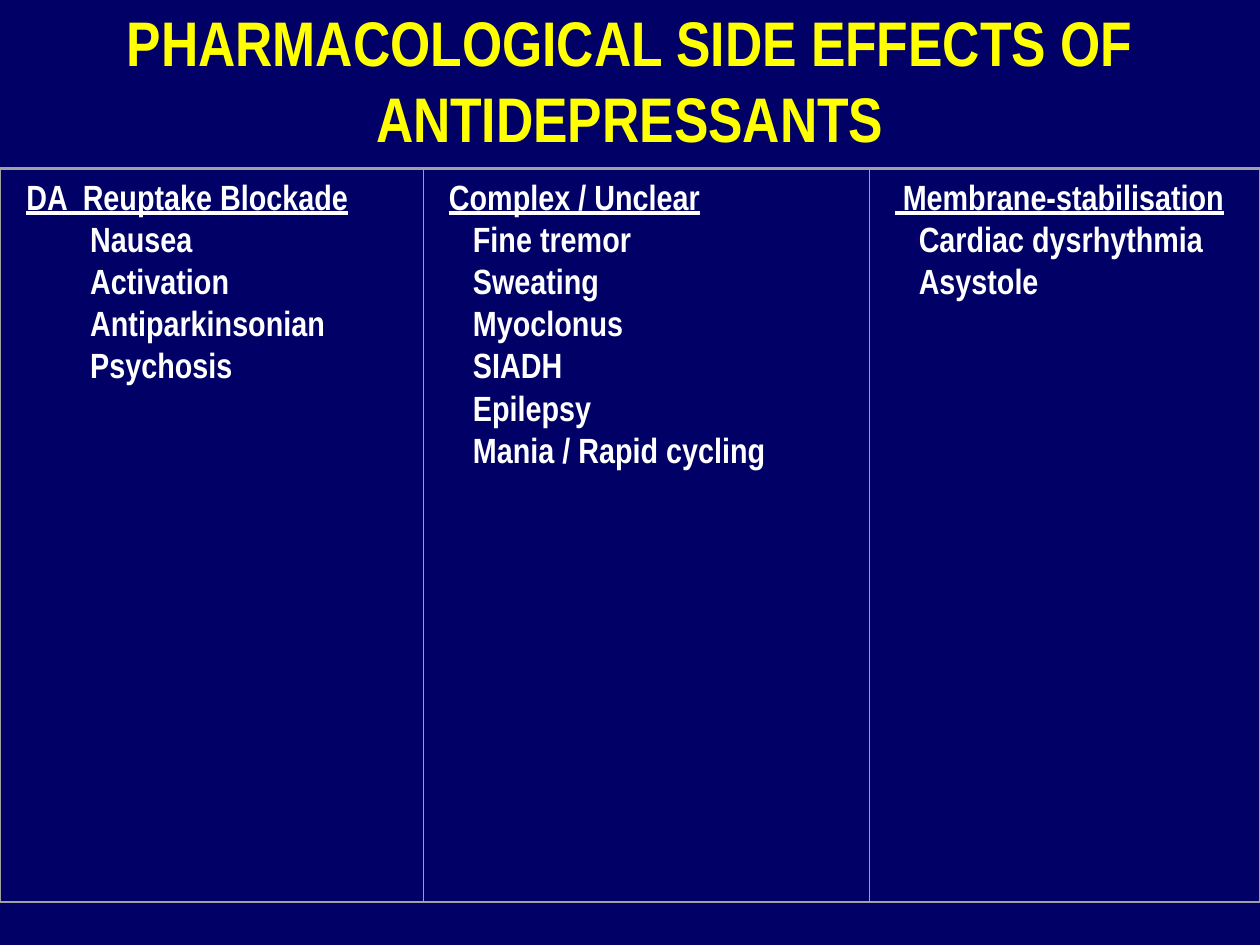
from pptx import Presentation
from pptx.dml.color import RGBColor
from pptx.enum.shapes import MSO_SHAPE
from pptx.enum.text import MSO_ANCHOR, PP_ALIGN
from pptx.util import Pt

COLORS = {"background": "000066", "title": "FFFF00", "text": "FFFFFF", "rule": "A0A0A0"}
TITLE_FORMAT = {"size": Pt(36), "bold": True}
HEADING_FORMAT = {"size": Pt(20), "bold": True, "underline": True}
EFFECT_FORMAT = {"size": Pt(20), "bold": True, "underline": False}


class SideEffectSlide:
    font_name = "Arial Narrow"

    def __init__(self, deck):
        self.slide = deck.slides.add_slide(deck.slide_layouts[6])
        fill = self.slide.background.fill
        fill.solid()
        fill.fore_color.rgb = RGBColor.from_string(COLORS["background"])

    def text_area(self, left, top, width, height):
        area = self.slide.shapes.add_textbox(Pt(left), Pt(top), Pt(width), Pt(height))
        area.text_frame.word_wrap = True
        return area.text_frame

    def line_of_text(self, paragraph, wording, color, formats, indent=0):
        run = paragraph.add_run()
        run.text = wording
        run.font.name = self.font_name
        run.font.color.rgb = RGBColor.from_string(COLORS[color])
        for name, value in formats.items():
            setattr(run.font, name, value)
        if indent:
            properties = paragraph._p.get_or_add_pPr()
            properties.set("marL", str(Pt(indent)))
            properties.set("indent", "0")

    def title(self, wording):
        frame = self.text_area(0, 12, 720, 108)
        frame.vertical_anchor = MSO_ANCHOR.MIDDLE
        frame.margin_bottom = Pt(45)  # lifts the heading clear of the columns
        frame.paragraphs[0].alignment = PP_ALIGN.CENTER
        self.line_of_text(frame.paragraphs[0], wording, "title", TITLE_FORMAT)

    def frame(self, left, top, width, height, weight):
        box = self.slide.shapes.add_shape(
            MSO_SHAPE.RECTANGLE, Pt(left), Pt(top), Pt(width), Pt(height))
        box.shadow.inherit = False
        box.fill.background()
        box.line.color.rgb = RGBColor.from_string(COLORS["rule"])
        box.line.width = Pt(weight)

    def column(self, left, right, heading, effects, indent):
        top, height, gap = 97, 418.5, 7.5
        body = self.text_area(left + gap, top, right - left - 2 * gap, height)
        self.line_of_text(body.paragraphs[0], heading, "text", HEADING_FORMAT)
        for effect in effects:
            self.line_of_text(body.add_paragraph(), effect, "text", EFFECT_FORMAT, indent)
        self.frame(left, top, right - left, height, 0)


def main():
    deck = Presentation()
    deck.slide_width, deck.slide_height = Pt(720), Pt(540)
    page = SideEffectSlide(deck)

    # Heading
    page.title("PHARMACOLOGICAL SIDE EFFECTS OF ANTIDEPRESSANTS")

    # Mechanism columns: heading, effects, indent of the effects
    mechanisms = [
        ("DA  Reuptake Blockade",
         ["Nausea", "Activation", "Antiparkinsonian", "Psychosis"], 36.5),
        ("Complex / Unclear",
         ["Fine tremor", "Sweating", "Myoclonus", "SIADH", "Epilepsy",
          "Mania / Rapid cycling"], 13.7),
        (" Membrane-stabilisation", ["Cardiac dysrhythmia", "Asystole"], 13.7),
    ]
    edges = [0.5, 242, 496.75, 719.75]
    for left, right, mechanism in zip(edges, edges[1:], mechanisms):
        page.column(left, right, *mechanism)

    # Outer frame
    page.frame(0, 96, 720, 419.75, 0.75)

    deck.save("out.pptx")


if __name__ == "__main__":
    main()
